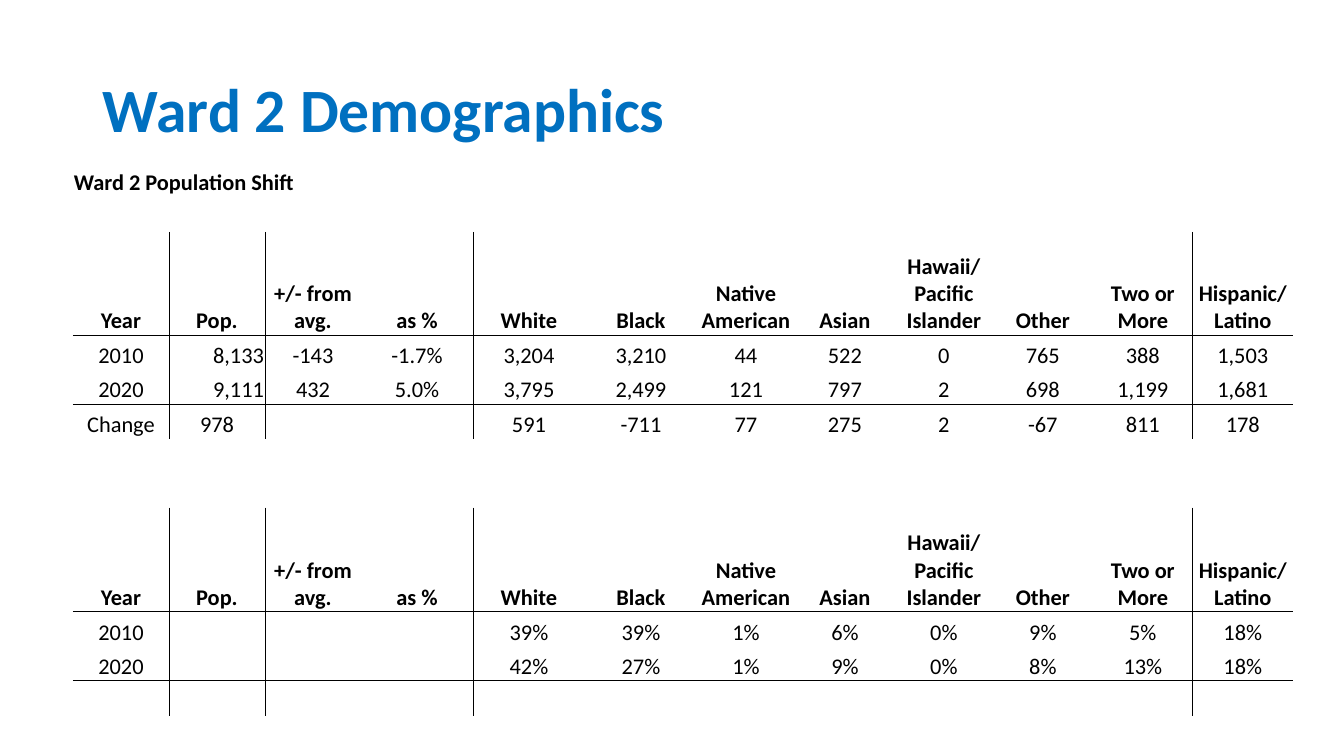
from lxml.etree import SubElement as Sub
from pptx import Presentation
from pptx.dml.color import RGBColor as RGB
from pptx.enum.text import MSO_ANCHOR as Anchor, PP_ALIGN as Align
from pptx.oxml.ns import qn
from pptx.util import Pt

PX = 914400 / 100.8
HUES = {"title": "0070C0", "ink": "000000"}
FONT = "Calibri"

COLS = [96, 96, 96, 112, 112, 112, 98, 100, 98, 100, 100, 100]
ROWS = [35, 35, 103, 35, 34, 35, 35, 34, 104, 35, 34, 35]
HEADS = ["Year", "Pop.", "+/- from avg.", "as %", "White", "Black",
         "Native American", "Asian", "Hawaii/Pacific Islander", "Other",
         "Two or More", "Hispanic/Latino"]
COUNTS = [
    ["2010", "8,133", "-143", "-1.7%", "3,204", "3,210", "44", "522", "0",
     "765", "388", "1,503"],
    ["2020", "9,111", "432", "5.0%", "3,795", "2,499", "121", "797", "2",
     "698", "1,199", "1,681"],
    ["Change", "978", "", "", "591", "-711", "77", "275", "2", "-67", "811",
     "178"],
]
SHARES = [
    ["2010", "", "", "", "39%", "39%", "1%", "6%", "0%", "9%", "5%", "18%"],
    ["2020", "", "", "", "42%", "27%", "1%", "9%", "0%", "8%", "13%", "18%"],
    [""] * 12,
]
BLANK = [""] * 12
GRID = [["Ward 2 Population Shift"] + [""] * 11, BLANK, HEADS, *COUNTS,
        BLANK, BLANK, HEADS, *SHARES]
HEAD_ROWS = {2, 8}
RIGHT = {(3, 1), (4, 1)}     # cells set flush right
BODY = {2, 3, 4, 5, 8, 9, 10, 11}
RULED_ROWS = {2, 4, 8, 10}   # rows with a line below
RULED_COLS = {0, 1, 3, 10}   # columns with a line to the right


def px(n):
    return round(n * PX)


def style(para, size, hue, bold):
    font = para.font
    font.name, font.size, font.bold = FONT, Pt(size), bold
    font.color.rgb = RGB.from_string(HUES[hue])


def edge(cell, side, shown):
    """Draw one border of a cell, or switch it off."""
    line = Sub(cell._tc.get_or_add_tcPr(), qn("a:ln" + side), w=str(Pt(0.5)))
    if shown:
        fill = Sub(line, qn("a:solidFill"))
        Sub(fill, qn("a:srgbClr"), val=HUES["ink"])
    else:
        Sub(line, qn("a:noFill"))


def frame(cell, row, col):
    body = row in BODY
    edge(cell, "L", body and col - 1 in RULED_COLS)
    edge(cell, "R", body and col in RULED_COLS)
    edge(cell, "T", row - 1 in RULED_ROWS)
    edge(cell, "B", row in RULED_ROWS)
    cell.fill.background()


def fill_cell(cell, row, col, text):
    cell.margin_left = cell.margin_right = cell.margin_top = px(1)
    cell.margin_bottom = 0
    cell.vertical_anchor = Anchor.BOTTOM
    cell.text = text
    para = cell.text_frame.paragraphs[0]
    if row > 0:
        para.alignment = Align.RIGHT if (row, col) in RIGHT else Align.CENTER
    style(para, 16, "ink", row == 0 or row in HEAD_ROWS)
    frame(cell, row, col)


def add_title(slide, x, y, w, h):
    box = slide.shapes.add_textbox(px(x), px(y), px(w), px(h))
    text = box.text_frame
    text.word_wrap = True
    text.vertical_anchor = Anchor.MIDDLE
    text.text = "Ward 2 Demographics"
    para = text.paragraphs[0]
    para.line_spacing = 0.9
    style(para, 44, "title", True)


def add_grid(slide, x, y):
    table = slide.shapes.add_table(len(ROWS), len(COLS), px(x), px(y),
                                   px(sum(COLS)), px(sum(ROWS))).table
    table.first_row = table.horz_banding = False
    for col, wide in zip(table.columns, COLS):
        col.width = px(wide)
    for row, high in zip(table.rows, ROWS):
        row.height = px(high)
    for r, line in enumerate(GRID):
        for c, text in enumerate(line):
            fill_cell(table.cell(r, c), r, c, text)
    table.cell(0, 0).merge(table.cell(0, 2))


def main():
    deck = Presentation()
    deck.slide_width, deck.slide_height = px(1344), px(756)
    slide = deck.slides.add_slide(deck.slide_layouts[6])
    add_title(slide, 93, 40, 1159, 146)
    add_grid(slide, 73, 162)
    deck.save("out.pptx")


if __name__ == "__main__":
    main()
